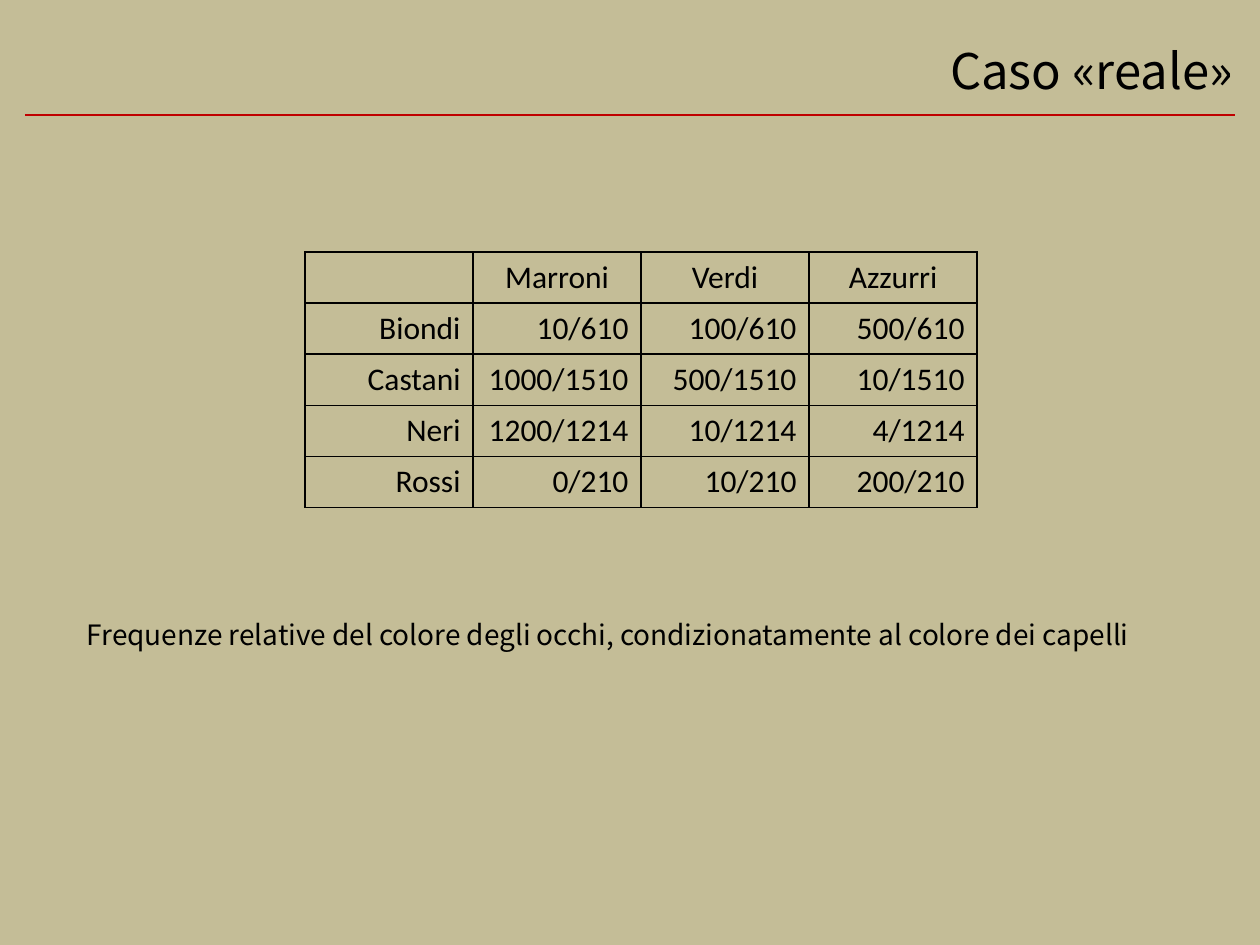
"""Build the slide with eye colour frequencies conditional on hair colour."""
from dataclasses import dataclass
from typing import Any

import lxml.etree
import pptx
import pptx.dml.color
import pptx.enum.shapes
import pptx.enum.text
import pptx.oxml.ns
import pptx.util

Cm = pptx.util.Cm
Pt = pptx.util.Pt
Align = pptx.enum.text.PP_ALIGN
Anchor = pptx.enum.text.MSO_ANCHOR
qn = pptx.oxml.ns.qn

BLACK, RED, SAND = "000000", "C00000", "C4BD97"
SANS = "Noto Sans CJK KR"


@dataclass(frozen=True)
class Style:
    """Font and alignment of a paragraph."""
    font: str
    size: float
    align: Any


@dataclass(frozen=True)
class HairRow:
    """Eye colour frequencies for one hair colour."""
    hair: str
    counts: tuple[int, ...]

    def texts(self) -> list[str]:
        """Return the cell texts of the row."""
        total = sum(self.counts)
        return [self.hair] + [f"{n}/{total}" for n in self.counts]


TITLE = Style(SANS, 28, Align.RIGHT)
CAPTION = Style(SANS, 16, Align.LEFT)
HEADER = Style("Calibri", 18, Align.CENTER)
BODY = Style("Calibri", 18, Align.RIGHT)
EYES = ["", "Marroni", "Verdi", "Azzurri"]
ROWS = [
    HairRow("Biondi", (10, 100, 500)),
    HairRow("Castani", (1000, 500, 10)),
    HairRow("Neri", (1200, 10, 4)),
    HairRow("Rossi", (0, 10, 200)),
]


def set_attrs(obj: Any, values: dict[str, Any]) -> None:
    """Set each named attribute on an object."""
    for name, value in values.items():
        setattr(obj, name, value)


def paint(color_format: Any, color: str) -> None:
    """Apply a hex colour to a colour format."""
    color_format.rgb = pptx.dml.color.RGBColor.from_string(color)


def write(tf: Any, text: str, style: Style) -> None:
    """Write one styled paragraph."""
    p = tf.paragraphs[0]
    p.alignment = style.align
    r = p.add_run()
    r.text = text
    set_attrs(r.font, {"name": style.font, "size": Pt(style.size), "bold": False})
    paint(r.font.color, BLACK)


def add_borders(cell: Any) -> None:
    """Draw a thin black line on every side of a cell."""
    tc_pr = cell._tc.get_or_add_tcPr()
    for side in ("lnL", "lnR", "lnT", "lnB"):
        ln = lxml.etree.SubElement(tc_pr, qn(f"a:{side}"), w=str(Pt(1)))
        fill = lxml.etree.SubElement(ln, qn("a:solidFill"))
        lxml.etree.SubElement(fill, qn("a:srgbClr"), val=BLACK)


def add_title(s: Any, text: str) -> None:
    """Place the title and the rule below it."""
    sp = s.shapes.title
    set_attrs(sp, {"left": Cm(2.24), "top": Cm(0.53), "width": Cm(22.86), "height": Cm(1.75)})
    sp.text_frame.vertical_anchor = Anchor.MIDDLE
    write(sp.text_frame, text, TITLE)
    rule = s.shapes.add_connector(
        pptx.enum.shapes.MSO_CONNECTOR.STRAIGHT, Cm(0.5), Cm(2.32), Cm(24.9), Cm(2.32))
    rule.line.width = Pt(1)
    paint(rule.line.color, RED)
    lxml.etree.SubElement(rule._element.spPr, qn("a:effectLst"))


def add_frequencies(s: Any) -> None:
    """Add the frequency table."""
    grid = [EYES] + [row.texts() for row in ROWS]
    table = s.shapes.add_table(
        len(grid), len(EYES), Cm(6.15), Cm(5.08), Cm(13.55), Cm(5.15)).table
    set_attrs(table, {"first_row": False, "horz_banding": False})
    for i, texts in enumerate(grid):
        for j, text in enumerate(texts):
            cell = table.cell(i, j)
            add_borders(cell)
            cell.fill.background()
            if text:
                write(cell.text_frame, text, BODY if i else HEADER)


def add_caption(s: Any, text: str) -> None:
    """Add the caption below the table."""
    tf = s.shapes.add_textbox(Cm(1.5), Cm(12.32), Cm(22.73), Cm(0.94)).text_frame
    set_attrs(tf, {"word_wrap": False,
                   "auto_size": pptx.enum.text.MSO_AUTO_SIZE.SHAPE_TO_FIT_TEXT})
    write(tf, text, CAPTION)


def main() -> None:
    """Build and save the presentation."""
    prs = pptx.Presentation()
    set_attrs(prs, {"slide_width": Cm(25.4), "slide_height": Cm(19.05)})
    s = prs.slides.add_slide(prs.slide_layouts[5])
    s.background.fill.solid()
    paint(s.background.fill.fore_color, SAND)
    add_title(s, "Caso «reale»")
    add_frequencies(s)
    add_caption(s, "Frequenze relative del colore degli occhi, "
                   "condizionatamente al colore dei capelli")
    prs.save("out.pptx")


if __name__ == "__main__":
    main()
